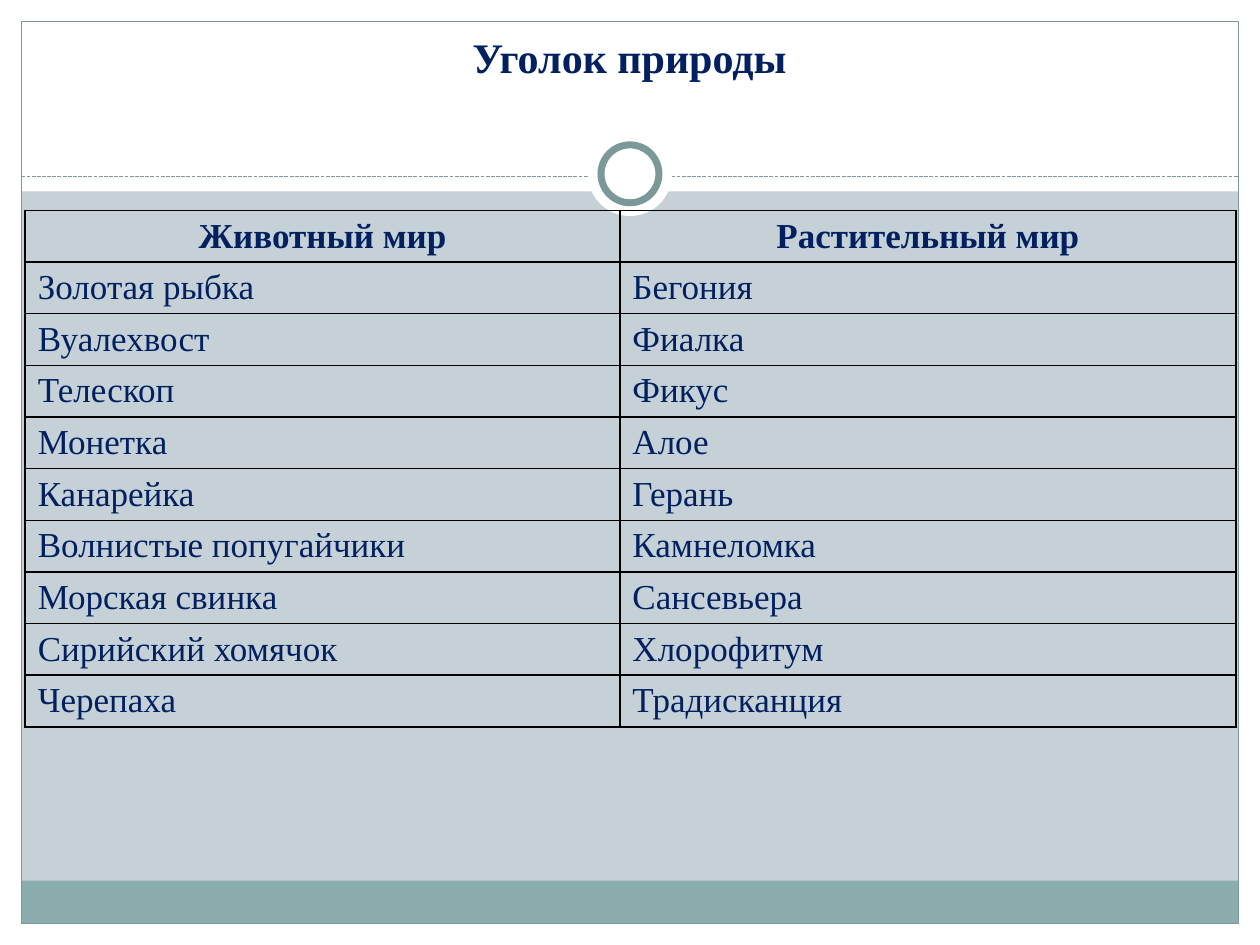
"""Builds the nature corner slide: a framed page with a two-column table of animals and plants."""
from dataclasses import dataclass

from lxml.etree import SubElement
from pptx import Presentation
from pptx.dml.color import RGBColor
from pptx.enum.dml import MSO_LINE
from pptx.enum.shapes import MSO_CONNECTOR, MSO_SHAPE
from pptx.enum.text import MSO_ANCHOR, PP_ALIGN
from pptx.oxml import parse_xml
from pptx.oxml.ns import nsdecls, qn
from pptx.util import Inches, Pt

HEADING = "Уголок природы"
COLUMNS = ("Животный мир", "Растительный мир")
INHABITANTS = [
    ("Золотая рыбка", "Бегония"),
    ("Вуалехвост", "Фиалка"),
    ("Телескоп", "Фикус"),
    ("Монетка", "Алое"),
    ("Канарейка", "Герань"),
    ("Волнистые попугайчики", "Камнеломка"),
    ("Морская свинка", "Сансевьера"),
    ("Сирийский хомячок", "Хлорофитум"),
    ("Черепаха", "Традисканция"),
]


@dataclass(frozen=True)
class Theme:
    page: str = "C5D1D7"
    paper: str = "FFFFFF"
    band: str = "8CADAE"
    accent: str = "7C999A"
    ink: str = "002060"
    grid: str = "000000"
    font: str = "Times New Roman"
    heading_size: int = 24
    table_size: int = 20


THEME = Theme()
WIDTH, HEIGHT, MARGIN = 10, 7.5, 0.17
HEADER_HEIGHT, BAND_HEIGHT, DIVIDER_Y = 1.52, 0.34, 1.4
INNER_WIDTH, INNER_HEIGHT = WIDTH - 2 * MARGIN, HEIGHT - 2 * MARGIN
RING_X, RING_Y, HALO_SIZE, RING_SIZE = WIDTH / 2, 1.38, 0.67, 0.46
TABLE_LEFT, TABLE_TOP, ROW_HEIGHT = 0.2, 1.67, 0.41
COLUMN_WIDTHS = (4.72, 4.89)


def rgb(color):
    return RGBColor.from_string(color)


def add_part(slide, preset, box, fill=None, line=None, line_width=0.75):
    part = slide.shapes.add_shape(preset, *map(Inches, box))
    part.shadow.inherit = False
    if fill:
        part.fill.solid()
        part.fill.fore_color.rgb = rgb(fill)
    else:
        part.fill.background()
    if line:
        part.line.color.rgb = rgb(line)
        part.line.width = Pt(line_width)
    else:
        part.line.fill.background()


def centred_square(size):
    return RING_X - size / 2, RING_Y - size / 2, size, size


def write(frame, text, size, bold, align):
    frame.text = text
    paragraph = frame.paragraphs[0]
    paragraph.alignment = align
    font = paragraph.runs[0].font
    font.name, font.size, font.bold = THEME.font, Pt(size), bold
    font.color.rgb = rgb(THEME.ink)


def add_backdrop(slide):
    slide.background.fill.solid()
    slide.background.fill.fore_color.rgb = rgb(THEME.page)
    edges = [
        (0, HEIGHT - MARGIN, WIDTH, MARGIN),
        (0, 0, WIDTH, HEADER_HEIGHT),
        (0, 0, MARGIN, HEIGHT),
        (WIDTH - MARGIN, 0, MARGIN, HEIGHT),
    ]
    for edge in edges:
        add_part(slide, MSO_SHAPE.RECTANGLE, edge, THEME.paper)
    band = (MARGIN, HEIGHT - MARGIN - BAND_HEIGHT, INNER_WIDTH, BAND_HEIGHT)
    add_part(slide, MSO_SHAPE.RECTANGLE, band, THEME.band)
    frame = (MARGIN, MARGIN, INNER_WIDTH, INNER_HEIGHT)
    add_part(slide, MSO_SHAPE.RECTANGLE, frame, line=THEME.accent)
    divider = slide.shapes.add_connector(
        MSO_CONNECTOR.STRAIGHT,
        *map(Inches, (MARGIN, DIVIDER_Y, WIDTH - MARGIN, DIVIDER_Y)))
    divider.line.color.rgb = rgb(THEME.accent)
    divider.line.width = Pt(0.75)
    divider.line.dash_style = MSO_LINE.SQUARE_DOT
    SubElement(divider._element.spPr, qn("a:effectLst"))
    add_part(slide, MSO_SHAPE.OVAL, centred_square(HALO_SIZE), THEME.paper)
    add_part(slide, MSO_SHAPE.OVAL, centred_square(RING_SIZE), THEME.paper, THEME.accent, 4)


def add_heading(slide):
    heading = slide.shapes.title
    heading.left, heading.top = Inches(0.33), Inches(0.25)
    heading.width, heading.height = Inches(9.33), Inches(0.83)
    frame = heading.text_frame
    frame.vertical_anchor = MSO_ANCHOR.TOP
    frame.margin_top = 0
    write(frame, HEADING, THEME.heading_size, True, PP_ALIGN.CENTER)
    slide.shapes._spTree.append(heading._element)


def add_borders(cell):
    properties = cell._tc.get_or_add_tcPr()
    for index, side in enumerate(("lnL", "lnR", "lnT", "lnB")):
        properties.insert(index, parse_xml(
            f'<a:{side} {nsdecls("a")} w="{Pt(1)}"><a:solidFill>'
            f'<a:srgbClr val="{THEME.grid}"/></a:solidFill></a:{side}>'))


def add_inhabitants(slide):
    rows = [COLUMNS, *INHABITANTS]
    box = (TABLE_LEFT, TABLE_TOP, sum(COLUMN_WIDTHS), ROW_HEIGHT * len(rows))
    table = slide.shapes.add_table(len(rows), len(COLUMNS), *map(Inches, box)).table
    table.horz_banding = False
    for column, width in zip(table.columns, COLUMN_WIDTHS):
        column.width = Inches(width)
    for r, names in enumerate(rows):
        header = r == 0
        align = PP_ALIGN.CENTER if header else PP_ALIGN.LEFT
        for c, name in enumerate(names):
            cell = table.cell(r, c)
            cell.fill.background()
            add_borders(cell)
            write(cell.text_frame, name, THEME.table_size, header, align)


def main():
    deck = Presentation()
    deck.slide_width, deck.slide_height = Inches(WIDTH), Inches(HEIGHT)
    slide = deck.slides.add_slide(deck.slide_layouts.get_by_name("Title Only"))
    add_backdrop(slide)
    add_heading(slide)
    add_inhabitants(slide)
    deck.save("out.pptx")


if __name__ == "__main__":
    main()
